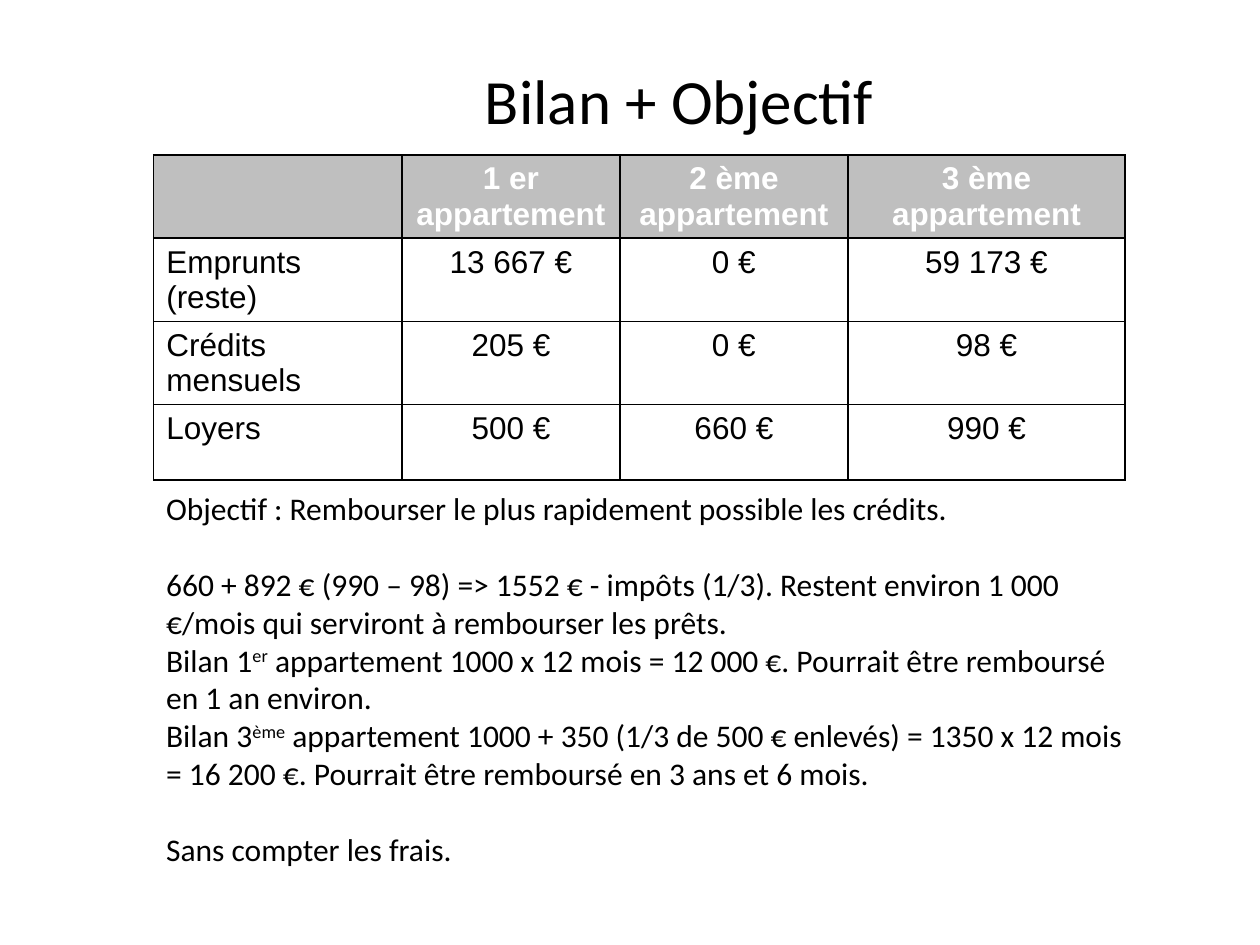
import dataclasses

import pptx
import pptx.dml.color
import pptx.enum.text
import pptx.oxml
import pptx.oxml.ns
import pptx.util

Inches = pptx.util.Inches
Pt = pptx.util.Pt
ALIGN = pptx.enum.text.PP_ALIGN


@dataclasses.dataclass(frozen=True)
class Theme:
    """Colours, fonts and type sizes of the slide."""
    ink: str = "000000"
    paper: str = "FFFFFF"
    header: str = "BFBFBF"
    text_font: str = "Calibri"
    table_font: str = "Arial"
    title_size: int = 36
    body_size: int = 18
    blank_line: int = 22
    border: int = 1


THEME = Theme()
BODY_FORMAT = {"name": THEME.text_font, "size": Pt(THEME.body_size), "bold": False}
TITLE_FORMAT = {**BODY_FORMAT, "size": Pt(THEME.title_size)}
CELL_FORMAT = {**BODY_FORMAT, "name": THEME.table_font}
HEADER_FORMAT = {**CELL_FORMAT, "bold": True}

COLUMN_WIDTHS = (1.97, 1.73, 1.81, 2.2)
ROW_HEIGHT = 0.6
BALANCE = (
    ("", "1 er appartement", "2 ème appartement", "3 ème appartement"),
    ("Emprunts (reste)", "13 667 €", "0 €", "59 173 €"),
    ("Crédits mensuels", "205 €", "0 €", "98 €"),
    ("Loyers", "500 €", "660 €", "990 €"),
)
GOAL = (
    (0, ("Objectif : Rembourser le plus rapidement possible les crédits.",)),
    (THEME.blank_line, ("660 + 892 € (990 – 98) => 1552 € - impôts (1/3). Restent environ "
                        "1 000 €/mois qui serviront à rembourser les prêts.",)),
    (0, ("Bilan 1", "er", " appartement 1000 x 12 mois = 12 000 €. "
         "Pourrait être remboursé en 1 an environ.")),
    (0, ("Bilan 3", "ème", " appartement 1000 + 350 (1/3 de 500 € enlevés) = "
         "1350 x 12 mois = 16 200 €. Pourrait être remboursé en 3 ans et 6 mois.")),
    (THEME.blank_line, ("Sans compter les frais.",)),
)


def rgb(value):
    """Turn a hex string into a colour."""
    return pptx.dml.color.RGBColor.from_string(value)


def add_run(paragraph, text, font_format, color=THEME.ink):
    """Add one formatted run to a paragraph."""
    run = paragraph.add_run()
    run.text = text
    for attribute, value in font_format.items():
        setattr(run.font, attribute, value)
    run.font.color.rgb = rgb(color)
    return run


def add_text_frame(slide, box):
    """Add a wrapping text box and return its frame."""
    frame = slide.shapes.add_textbox(*map(Inches, box)).text_frame
    frame.word_wrap = True
    return frame


def add_title(slide, box):
    """Place the centred title."""
    heading = add_text_frame(slide, box).paragraphs[0]
    heading.alignment = ALIGN.CENTER
    add_run(heading, "Bilan + Objectif", TITLE_FORMAT)


def outline_cell(cell):
    """Draw the four borders of a table cell."""
    properties = cell._tc.get_or_add_tcPr()
    for side in "LRTB":
        properties.append(pptx.oxml.parse_xml(
            f'<a:ln{side} {pptx.oxml.ns.nsdecls("a")} w="{Pt(THEME.border)}">'
            f'<a:solidFill><a:srgbClr val="{THEME.ink}"/></a:solidFill></a:ln{side}>'))


def add_balance(slide, left, top):
    """Place the table comparing the three apartments."""
    size = (sum(COLUMN_WIDTHS), ROW_HEIGHT * len(BALANCE))
    balance = slide.shapes.add_table(
        len(BALANCE), len(COLUMN_WIDTHS), *map(Inches, (left, top, *size))).table
    for column, width in zip(balance.columns, COLUMN_WIDTHS):
        column.width = Inches(width)
    for row_index, values in enumerate(BALANCE):
        is_header = row_index == 0
        for column_index, value in enumerate(values):
            cell = balance.cell(row_index, column_index)
            outline_cell(cell)
            cell.fill.solid()
            cell.fill.fore_color.rgb = rgb(THEME.header if is_header else THEME.paper)
            entry = cell.text_frame.paragraphs[0]
            entry.alignment = ALIGN.CENTER if column_index else ALIGN.LEFT
            if value:
                add_run(entry, value, HEADER_FORMAT if is_header else CELL_FORMAT,
                        THEME.paper if is_header else THEME.ink)


def add_goal(slide, box):
    """Place the repayment goal, with ordinal endings raised."""
    frame = add_text_frame(slide, box)
    for index, (gap, pieces) in enumerate(GOAL):
        statement = frame.add_paragraph() if index else frame.paragraphs[0]
        statement.space_before = Pt(gap)
        for position, piece in enumerate(pieces):
            run = add_run(statement, piece, BODY_FORMAT)
            if position == 1:
                run._r.get_or_add_rPr().set("baseline", "30000")


def main():
    """Build and save the slide."""
    deck = pptx.Presentation()
    deck.slide_width, deck.slide_height = Inches(10), Inches(7.5)
    slide = deck.slides.add_slide(deck.slide_layouts[6])
    add_balance(slide, 1.22, 1.23)
    add_title(slide, (1.77, 0.44, 7.24, 0.71))
    add_goal(slide, (1.22, 3.83, 7.95, 3.43))
    deck.save("out.pptx")


if __name__ == "__main__":
    main()
